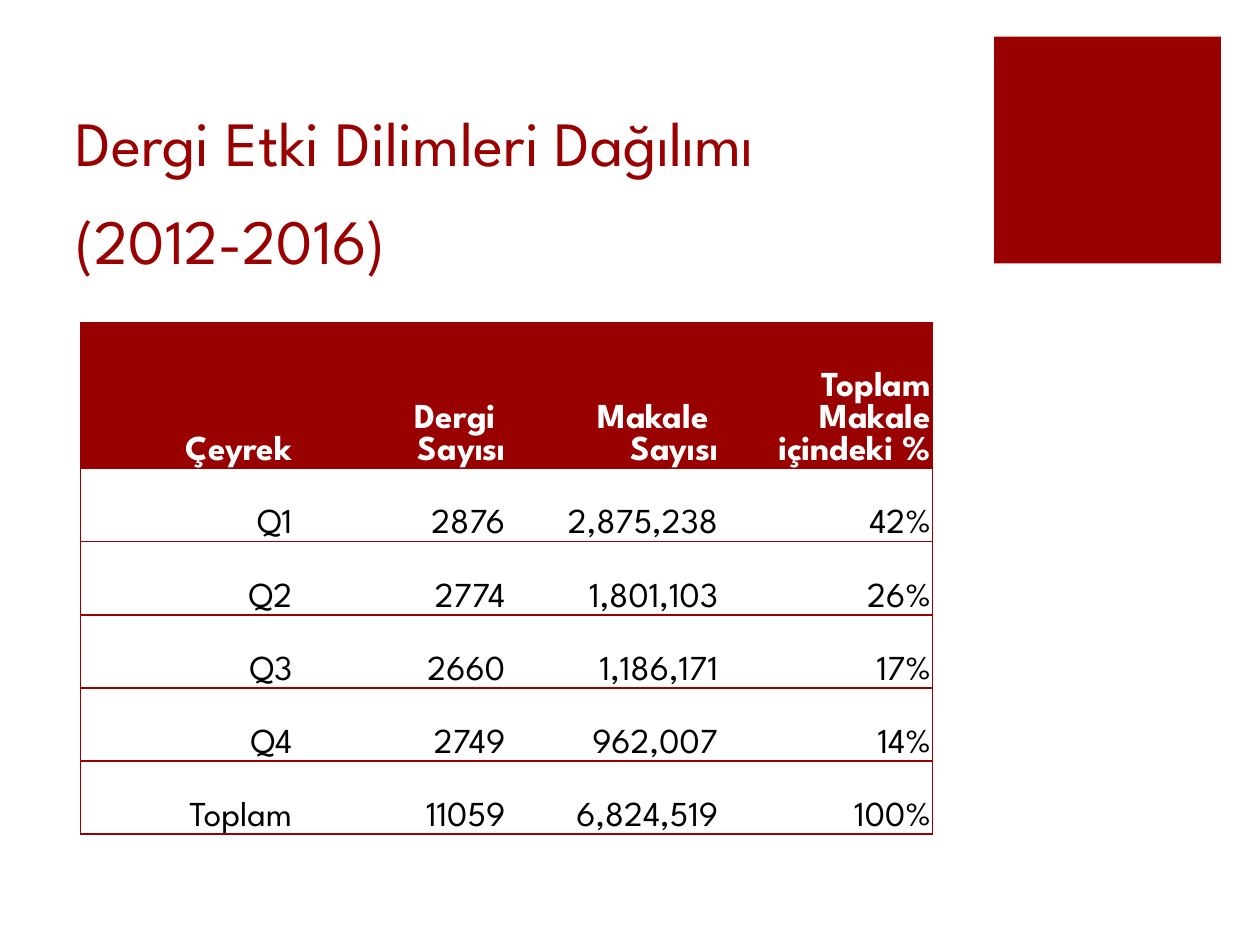
from copy import deepcopy
from lxml import etree
from pptx import Presentation
from pptx import util as u
from pptx.dml.color import RGBColor
from pptx.enum import shapes, text
from pptx.oxml.ns import qn

TITLE = "Dergi Etki Dilimleri Dağılımı\v(2012-2016)"
ROWS = [
    ("Çeyrek", "Dergi \nSayısı", "Makale \nSayısı", "Toplam Makale içindeki %"),
    ("Q1", "2876", "2,875,238", "42%"),
    ("Q2", "2774", "1,801,103", "26%"),
    ("Q3", "2660", "1,186,171", "17%"),
    ("Q4", "2749", "962,007", "14%"),
    ("Toplam", "11059", "6,824,519", "100%"),
]
HEX = {"red": "990000", "white": "FFFFFF", "black": "000000"}
FONT = "League Spartan"
HEAD, BODY, WIDE = 1.16, 0.58, 1.69
CELL = {
    "margin_left": u.Inches(0.01),
    "margin_right": u.Inches(0.01),
    "margin_top": u.Inches(0.01),
    "margin_bottom": 0,
    "vertical_anchor": text.MSO_ANCHOR.BOTTOM,
}


def place(*box):
    return [u.Inches(n) for n in box]


def rgb(name):
    return RGBColor.from_string(HEX[name])


def paint(fill, name):
    fill.solid()
    fill.fore_color.rgb = rgb(name)


def apply(item, form):
    for key, value in form.items():
        setattr(item, key, value)


def style(run, size, color, bold=False):
    apply(run.font, {"name": FONT, "size": u.Pt(size), "bold": bold})
    run.font.color.rgb = rgb(color)


def border(cell, sides):
    props = cell._tc.get_or_add_tcPr()
    for side in "LRTB":
        line = etree.SubElement(props, qn(f"a:ln{side}"), w=str(u.Pt(1)))
        if side in sides:
            fill = etree.SubElement(line, qn("a:solidFill"))
            etree.SubElement(fill, qn("a:srgbClr"), val=HEX["red"])
        else:
            etree.SubElement(line, qn("a:noFill"))


def add_title(slide):
    title = slide.shapes.title
    apply(title, dict(zip(("left", "top", "width", "height"), place(0.5, 1, 7.12, 1.25))))
    frame = title.text_frame
    frame.text = TITLE
    apply(frame, {"vertical_anchor": text.MSO_ANCHOR.BOTTOM, "word_wrap": True,
                  "auto_size": text.MSO_AUTO_SIZE.NONE})
    para = frame.paragraphs[0]
    apply(para, {"alignment": text.PP_ALIGN.LEFT, "line_spacing": 1.3, "space_before": u.Pt(0)})
    for run in para.runs:
        style(run, 36, "red")
    for gap in para._p.findall(qn("a:br")):
        gap.append(deepcopy(para.runs[0]._r.rPr))


def add_grid(slide):
    count, cols = len(ROWS), len(ROWS[0])
    tall = HEAD + BODY * (count - 1)
    box = place(0.64, 2.56, WIDE * cols, tall)
    table = slide.shapes.add_table(count, cols, *box).table
    table.horz_banding = False
    for col in table.columns:
        col.width = u.Inches(WIDE)
    for r, words in enumerate(ROWS):
        table.rows[r].height = u.Inches(BODY if r else HEAD)
        for c, word in enumerate(words):
            cell = table.cell(r, c)
            cell.text = word
            apply(cell, CELL)
            border(cell, "TB" + "L" * (c == 0) + "R" * (c == cols - 1))
            paint(cell.fill, "white" if r else "red")
            for para in cell.text_frame.paragraphs:
                para.alignment = text.PP_ALIGN.RIGHT
                for run in para.runs:
                    style(run, 20, "black" if r else "white", r == 0)


def main():
    deck = Presentation()
    apply(deck, {"slide_width": u.Inches(10), "slide_height": u.Inches(7.5)})
    slide = deck.slides.add_slide(deck.slide_layouts[5])
    block = slide.shapes.add_shape(shapes.MSO_SHAPE.RECTANGLE, *place(7.89, 0.29, 1.8, 1.8))
    block.shadow.inherit = False
    paint(block.fill, "red")
    block.line.fill.background()
    add_title(slide)
    add_grid(slide)
    deck.save("out.pptx")


if __name__ == "__main__":
    main()
